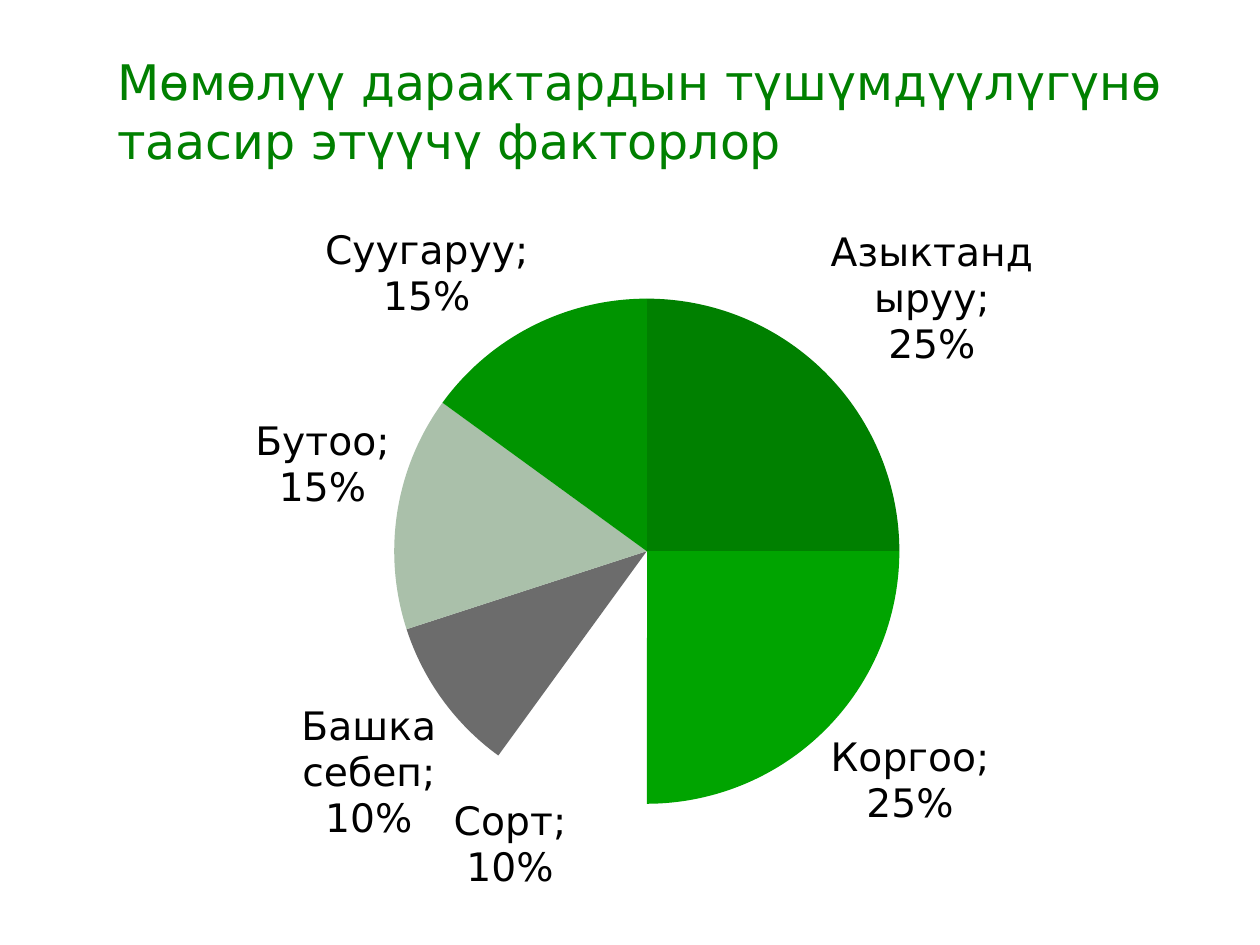
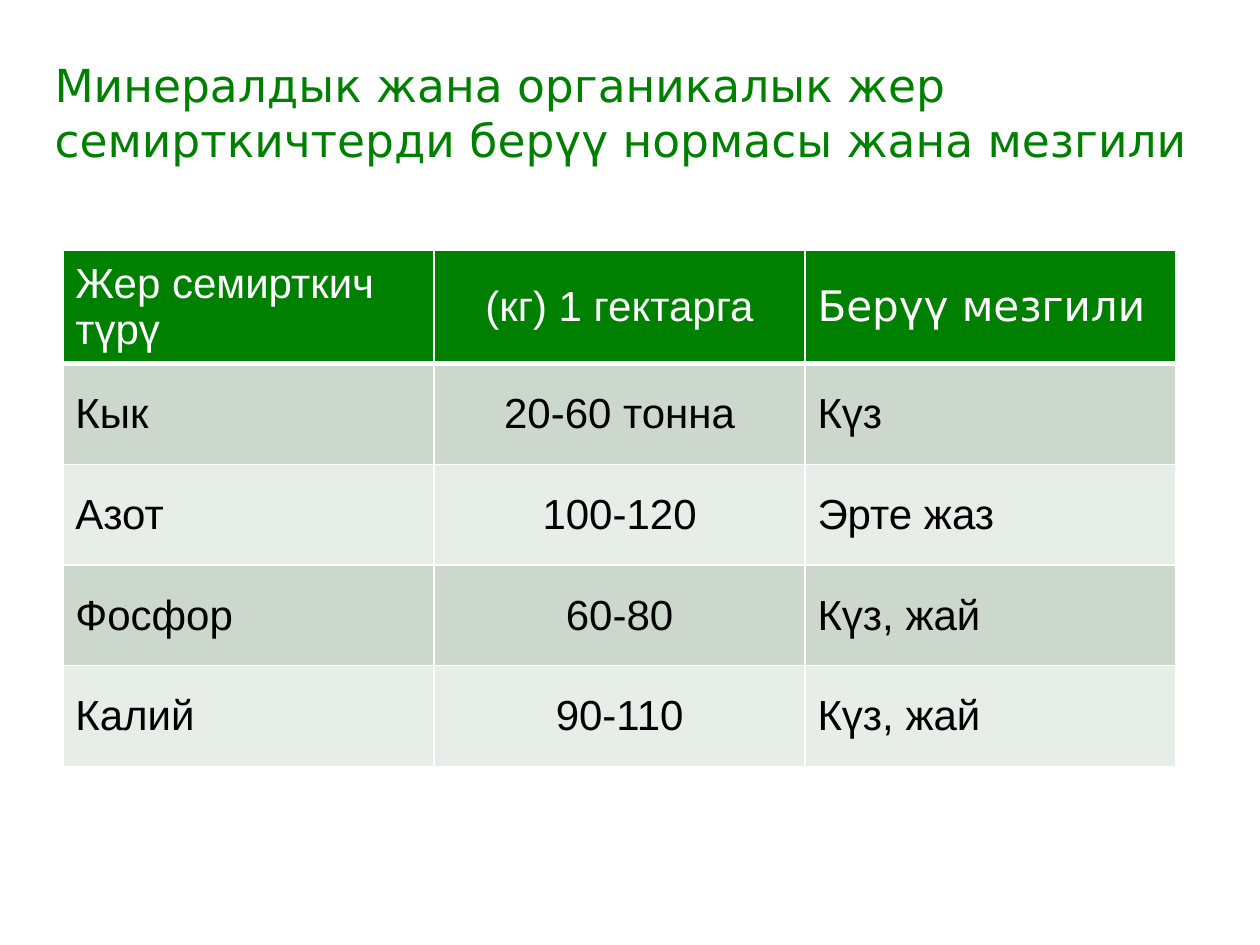
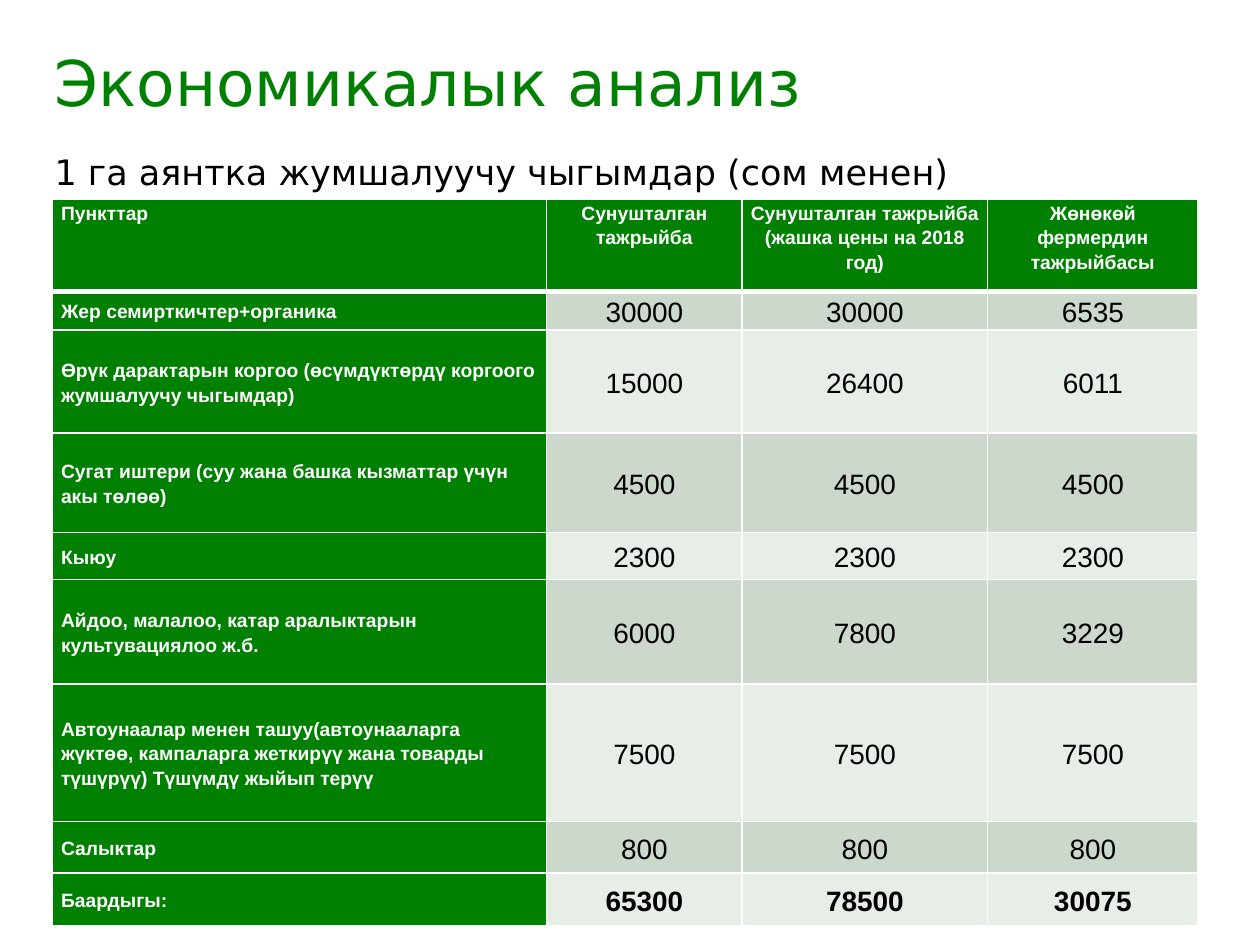
from lxml.etree import SubElement
from pptx import Presentation
from pptx.chart.data import CategoryChartData as ChartData
from pptx.dml.color import RGBColor as RGB
from pptx.enum.chart import XL_CHART_TYPE as Kind, XL_LABEL_POSITION as Spot
from pptx.enum.text import MSO_ANCHOR as Anchor, PP_ALIGN as Align
from pptx.oxml import parse_xml
from pptx.oxml.ns import nsdecls, qn
from pptx.util import Cm, Pt

HUES = {
    "green": "008000", "leaf": "00A400", "grass": "009400", "sage": "AAC0AA",
    "gray": "6C6C6C", "dark": "CCD8CC", "light": "E7EDE7",
    "white": "FFFFFF", "black": "000000",
}
SANS, PLAIN = "DejaVu Sans", "Arial"


def hue(name):
    return RGB.from_string(HUES[name])


def put(item, **vals):
    """Set each named value on the item."""
    for name, val in vals.items():
        setattr(item, name, val)


def ink(font, size, color, face=SANS, bold=False):
    put(font, size=Pt(size), name=face, bold=bold)
    font.color.rgb = hue(color)


def edge(cell, side, width):
    """Draw a white line on one side (L, R, T or B) of a cell."""
    line = SubElement(cell._tc.get_or_add_tcPr(), qn(f"a:ln{side}"), w=str(Pt(width)))
    fill = SubElement(line, qn("a:solidFill"))
    SubElement(fill, qn("a:srgbClr"), val=HUES["white"])


class Deck:
    def __init__(self):
        self.show = Presentation()
        put(self.show, slide_width=Cm(25.4), slide_height=Cm(19.05))
        self.slide = None

    def page(self):
        self.slide = self.show.slides.add_slide(self.show.slide_layouts[6])

    def text(self, words, at, size, color="black"):
        frame = self.slide.shapes.add_textbox(*map(Cm, at)).text_frame
        put(frame, word_wrap=True, vertical_anchor=Anchor.MIDDLE)
        run = frame.paragraphs[0].add_run()
        run.text = words
        ink(run.font, size, color)

    def title(self, words, at, size):
        self.text(words, at, size, "green")

    def pie(self, parts, at, plot):
        """Draw (name, share, color) parts; plot is x, y, w, h as fractions."""
        data = ChartData(number_format="0%")
        data.categories = [name for name, _, _ in parts]
        data.add_series("Series 1", [share for _, share, _ in parts])
        chart = self.slide.shapes.add_chart(Kind.PIE, *map(Cm, at), data).chart
        put(chart, has_legend=False, has_title=False)
        ink(chart.font, 22.4, "black")
        chart.plots[0].vary_by_categories = True
        series = chart.plots[0].series[0]
        for i, (_, _, color) in enumerate(parts):
            look = series.points[i].format
            look.fill.solid()
            look.fill.fore_color.rgb = hue(color)
            look.line.fill.background()
        tags = series.data_labels
        put(tags, show_value=True, show_category_name=True, show_percentage=False,
            number_format="0%", number_format_is_linked=False,
            position=Spot.OUTSIDE_END)
        ink(tags.font, 22.4, "black")
        root = chart.element
        for flag in root.xpath(".//c:ser/c:dLbls/c:showBubbleSize"):
            flag.addnext(parse_xml(f"<c:separator {nsdecls('c')}>; </c:separator>"))
        area = root.xpath(".//c:plotArea")[0]
        for old in area.xpath("./c:layout"):
            area.remove(old)
        spans = "".join(f'<c:{key} val="{val}"/>' for key, val in zip("xywh", plot))
        area.insert(0, parse_xml(
            f'<c:layout {nsdecls("c")}><c:manualLayout><c:layoutTarget val="inner"/>'
            f'<c:xMode val="edge"/><c:yMode val="edge"/>{spans}'
            "</c:manualLayout></c:layout>"))

    def table(self, rows, at, wides, highs, style, pad):
        """Fill a table; style(r, c) gives the font, paragraph, anchor and fill."""
        size = map(Cm, (*at, sum(wides), sum(highs)))
        grid = self.slide.shapes.add_table(len(rows), len(wides), *size).table
        grid.horz_banding = False
        for col, wide in zip(grid.columns, wides):
            col.width = Cm(wide)
        for r, (row, high) in enumerate(zip(rows, highs)):
            grid.rows[r].height = Cm(high)
            for c, words in enumerate(row):
                cell = grid.cell(r, c)
                font, para, anchor, fill = style(r, c)
                put(cell, text=words, vertical_anchor=anchor,
                    margin_left=Cm(pad[0]), margin_right=Cm(pad[0]),
                    margin_top=Cm(pad[1]), margin_bottom=Cm(pad[1]))
                put(cell.text_frame.paragraphs[0], **para)
                ink(cell.text_frame.paragraphs[0].runs[0].font, **font)
                for side in "LRTB":
                    edge(cell, side, 3 if (r, side) in ((0, "B"), (1, "T")) else 1)
                cell.fill.solid()
                cell.fill.fore_color.rgb = hue(fill)


def band(r):
    return "dark" if r % 2 else "light"


def dose(r, c):
    """Style of the fertilizer table."""
    head = r == 0
    font = dict(size=24, color="white" if head else "black",
                face=SANS if head and c == 2 else PLAIN)
    para = dict(alignment=Align.CENTER if c == 1 else Align.LEFT)
    return font, para, Anchor.MIDDLE, "green" if head else band(r)


def cost(r, c):
    """Style of the cost table."""
    head = r == 0 or c == 0
    font = dict(size=11 if head else 16, color="white" if head else "black",
                face=PLAIN, bold=head or r == len(COSTS) - 1)
    para = dict(alignment=Align.CENTER if c else Align.LEFT, line_spacing=1.15)
    if c == 0:
        para["space_before"] = Pt(12)
    return font, para, Anchor.MIDDLE if r else Anchor.TOP, "green" if head else band(r)


SHARES = [
    ("Азыктандыруу", 0.25, "green"), ("Коргоо", 0.25, "leaf"),
    ("Сорт", 0.1, "white"), ("Башка себеп", 0.1, "gray"),
    ("Бутоо", 0.15, "sage"), ("Суугаруу", 0.15, "grass"),
]
DOSES = [
    ("Жер семирткич түрү", "(кг) 1 гектарга", "Берүү мезгили"),
    ("Кык", "20-60 тонна", "Күз"),
    ("Азот", "100-120", "Эрте жаз"),
    ("Фосфор", "60-80", "Күз, жай"),
    ("Калий", "90-110", "Күз, жай"),
]
COSTS = [
    ("Пункттар", "Сунушталган тажрыйба",
     "Сунушталган тажрыйба (жашка цены на 2018 год)",
     "Жөнөкөй фермердин тажрыйбасы"),
    ("Жер семирткичтер+органика", "30000", "30000", "6535"),
    ("Өрүк дарактарын коргоо (өсүмдүктөрдү коргоого жумшалуучу чыгымдар)",
     "15000", "26400", "6011"),
    ("Сугат иштери (суу жана башка кызматтар үчүн акы төлөө)",
     "4500", "4500", "4500"),
    ("Кыюу", "2300", "2300", "2300"),
    ("Айдоо, малалоо, катар аралыктарын культувациялоо ж.б.",
     "6000", "7800", "3229"),
    ("Автоунаалар менен ташуу(автоунааларга жүктөө, кампаларга жеткирүү "
     "жана товарды түшүрүү) Түшүмдү жыйып терүү", "7500", "7500", "7500"),
    ("Салыктар", "800", "800", "800"),
    ("Баардыгы:", "65300", "78500", "30075"),
]


def main():
    deck = Deck()

    deck.page()
    deck.title("Мөмөлүү дарактардын түшүмдүүлүгүнө таасир этүүчү факторлор",
               (2.12, 1.06, 22.86, 2.33), 28)
    deck.pie(SHARES, (2.38, 3.66, 21.11, 14.76), (0.26, 0.16, 0.49, 0.69))

    deck.page()
    deck.title("Минералдык жана органикалык жер семирткичтерди берүү нормасы "
               "жана мезгили", (0.85, 1.27, 24.34, 1.98), 26)
    deck.table(DOSES, (1.27, 5.04), [7.48] * 3, [2.29] + [2.03] * 4,
               dose, (0.25, 0.13))

    deck.page()
    deck.title("Экономикалык анализ", (0.85, 0.64, 20.32, 1.98), 36)
    deck.table(COSTS, (1.06, 4.02), [9.96, 3.94, 4.95, 4.24],
               [1.85, 0.71, 2.08, 2.01, 0.94, 2.11, 2.77, 1.04, 1.07],
               cost, (0.17, 0))
    deck.text("1 га аянтка жумшалуучу чыгымдар (сом менен)",
              (0.85, 2.47, 20.32, 1.98), 20)

    deck.show.save("out.pptx")


if __name__ == "__main__":
    main()
